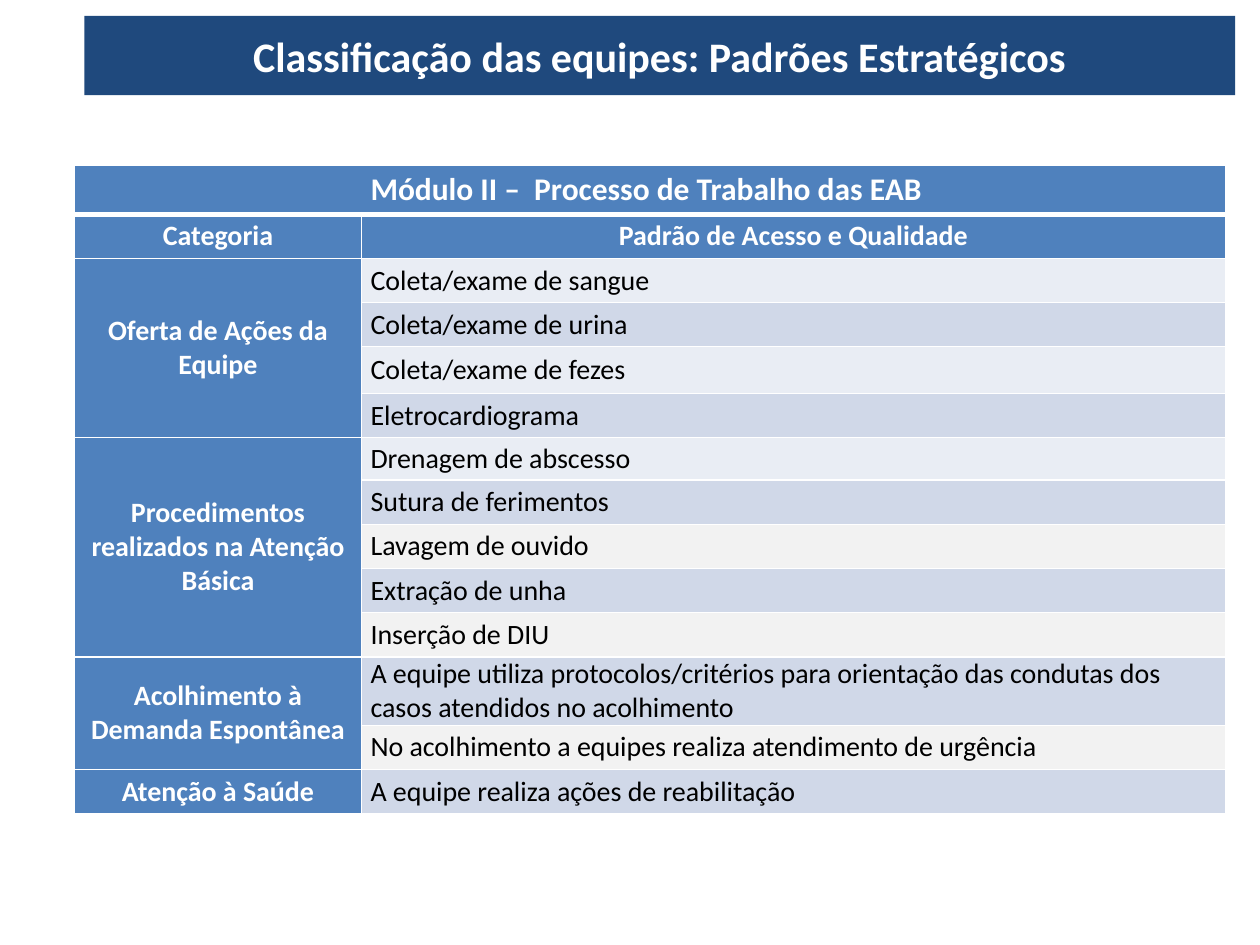
from lxml import etree
from pptx import Presentation
from pptx import util as u
from pptx.dml.color import RGBColor
from pptx.enum import shapes, text
from pptx.oxml.ns import qn

COLORS = {"navy": "1F497D", "blue": "4F81BD", "white": "FFFFFF", "black": "000000",
          "pale": "E9EDF4", "grey": "F2F2F2", "band": "D0D8E8"}
HEAD = {"size": u.Pt(16), "bold": True, "name": "Calibri"}
BODY = {**HEAD, "bold": False}
TITLE = {**HEAD, "size": u.Pt(18)}
BANNER = {**HEAD, "size": u.Pt(24)}

GROUPS = [
    ("Oferta de Ações da Equipe",
     ["Coleta/exame de sangue", "Coleta/exame de urina",
      "Coleta/exame de fezes", "Eletrocardiograma"]),
    ("Procedimentos realizados na Atenção Básica",
     ["Drenagem de abscesso", "Sutura de ferimentos", "Lavagem de ouvido",
      "Extração de unha", "Inserção de DIU"]),
    ("Acolhimento à Demanda Espontânea",
     ["A equipe utiliza protocolos/critérios para orientação das condutas dos "
      "casos atendidos no acolhimento",
      "No acolhimento a equipes realiza atendimento de urgência"]),
    ("Atenção à Saúde", ["A equipe realiza ações de reabilitação"]),
]
ROW_HEIGHT = 0.89
SPECIAL_HEIGHTS = {0: 0.99, 4: 0.94, 6: 0.86, 11: 1.35}
FIRST_GREY_ROW = 8


def rgb(name):
    """Return the named colour."""
    return RGBColor.from_string(COLORS[name])


def write(tf, words, fmt, color, centred=True):
    """Put one formatted paragraph into a text frame."""
    p = tf.paragraphs[0]
    p.alignment = text.PP_ALIGN.CENTER if centred else text.PP_ALIGN.LEFT
    r = p.add_run()
    r.text = words
    for key, value in fmt.items():
        setattr(r.font, key, value)
    r.font.color.rgb = rgb(color)


def add_borders(cell, row):
    """Draw white cell borders, thicker under the table title."""
    thick = {(0, "B"), (1, "T")}
    for side in "LRTB":
        width = u.Pt(3 if (row, side) in thick else 1)
        ln = etree.SubElement(cell._tc.get_or_add_tcPr(), qn(f"a:ln{side}"), w=str(width))
        fill = etree.SubElement(ln, qn("a:solidFill"))
        etree.SubElement(fill, qn("a:srgbClr"), val=COLORS["white"])


def fill_cell(cell, words, fill, fmt=HEAD, color="white", centred=True, inset=0.18):
    """Set the fill, margins and text of a cell."""
    cell.fill.solid()
    cell.fill.fore_color.rgb = rgb(fill)
    margins = {"margin_left": u.Cm(inset), "margin_right": u.Cm(inset),
               "margin_top": 0, "margin_bottom": 0,
               "vertical_anchor": text.MSO_ANCHOR.MIDDLE}
    for key, value in margins.items():
        setattr(cell, key, value)
    write(cell.text_frame, words, fmt, color, centred)


def add_standards_table(s):
    """Add the table of categories and their quality standards."""
    count = 2 + sum(len(items) for _, items in GROUPS)
    heights = [SPECIAL_HEIGHTS.get(i, ROW_HEIGHT) for i in range(count)]
    table = s.shapes.add_table(count, 2, u.Cm(1.5), u.Cm(3.33),
                               u.Cm(23.2), u.Cm(sum(heights))).table
    for column, width in zip(table.columns, (5.79, 17.41)):
        column.width = u.Cm(width)
    for i, height in enumerate(heights):
        table.rows[i].height = u.Cm(height)
        for cell in table.rows[i].cells:
            add_borders(cell, i)
    table.cell(0, 0).merge(table.cell(0, 1))
    fill_cell(table.cell(0, 0), "Módulo II –  Processo de Trabalho das EAB ",
              "blue", TITLE, inset=0.2)
    for col, words in enumerate(("Categoria", "Padrão de Acesso e Qualidade")):
        fill_cell(table.cell(1, col), words, "blue", inset=0.2)
    row = 2
    for category, items in GROUPS:
        if len(items) > 1:
            table.cell(row, 0).merge(table.cell(row + len(items) - 1, 0))
        fill_cell(table.cell(row, 0), category, "blue")
        for row, item in enumerate(items, row):
            light = "pale" if row < FIRST_GREY_ROW else "grey"
            fill_cell(table.cell(row, 1), item, "band" if row % 2 else light,
                      BODY, "black", False)
        row += 1


def add_banner(s, words):
    """Add the slide title on a dark bar."""
    sp = s.shapes.add_shape(shapes.MSO_SHAPE.RECTANGLE, u.Cm(1.7), u.Cm(0.32),
                            u.Cm(23.2), u.Cm(1.6))
    sp.shadow.inherit = False
    sp.fill.solid()
    sp.fill.fore_color.rgb = rgb("navy")
    sp.line.fill.background()
    tf = sp.text_frame
    tf.word_wrap = True
    tf.vertical_anchor = text.MSO_ANCHOR.MIDDLE
    write(tf, words, BANNER, "white")


def main():
    """Build and save the slide."""
    prs = Presentation()
    prs.slide_width, prs.slide_height = u.Cm(25.4), u.Cm(19.05)
    s = prs.slides.add_slide(prs.slide_layouts[6])
    add_standards_table(s)
    add_banner(s, "Classificação das equipes: Padrões Estratégicos")
    prs.save("out.pptx")


if __name__ == "__main__":
    main()
